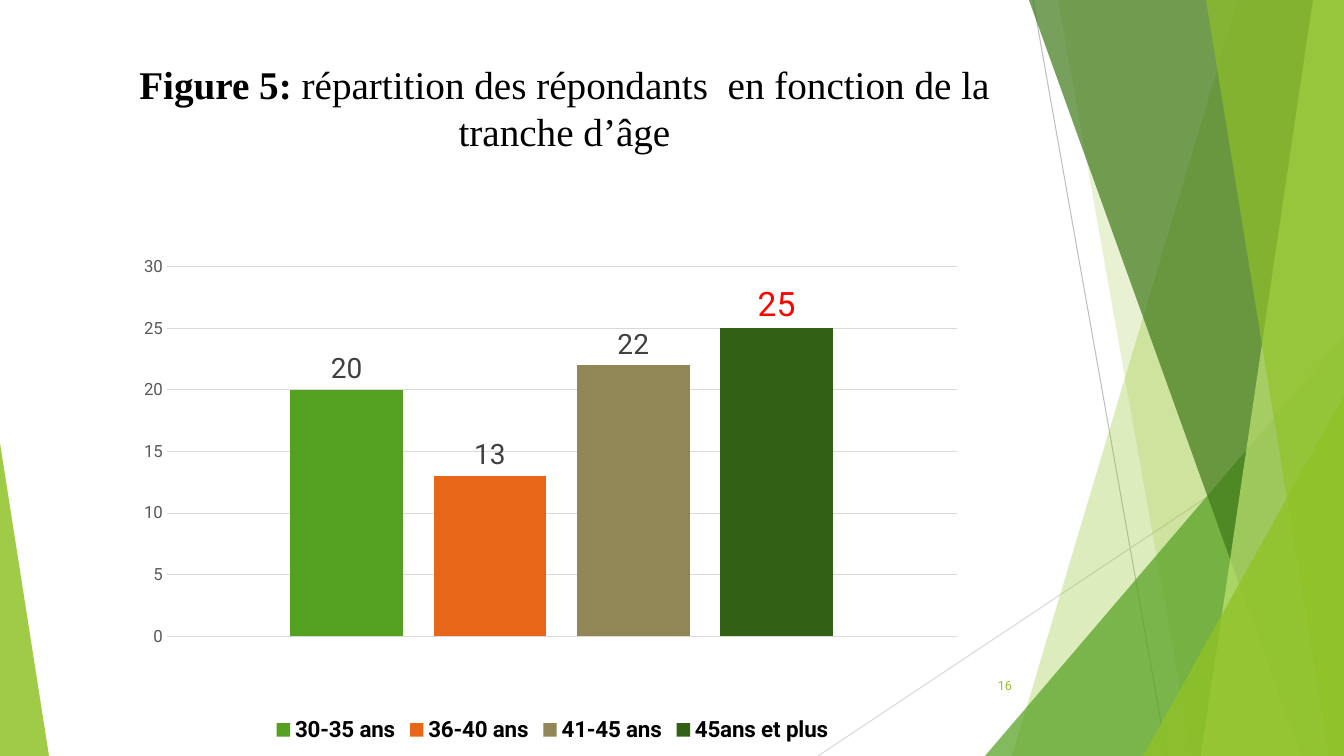
import pptx
import pptx.util
import pptx.chart.data
import pptx.oxml
import pptx.oxml.ns
from dataclasses import dataclass
from pptx.dml.color import RGBColor
from pptx.enum.chart import XL_CHART_TYPE, XL_LABEL_POSITION, XL_LEGEND_POSITION, XL_TICK_MARK
from pptx.enum.shapes import MSO_CONNECTOR, MSO_SHAPE
from pptx.enum.text import MSO_ANCHOR, PP_ALIGN


@dataclass(frozen=True)
class Theme:
    title_font: str = "Times New Roman"
    body_font: str = "Roboto"
    black: str = "000000"
    lime: str = "90C226"
    green: str = "54A021"
    dark_green: str = "3F7819"
    pale_lime: str = "C0E474"
    label: str = "404040"
    axis: str = "595959"
    grid: str = "D9D9D9"
    ray: str = "BFBFBF"
    red: str = "FF0000"
    title_size: int = 28
    label_size: int = 20
    highlight_size: int = 24
    legend_size: int = 16
    axis_size: int = 12
    number_size: int = 9


T = Theme()

# Content
TITLE = [("Figure 5: ", True),
         ("répartition des répondants  en fonction de la tranche d’âge", False)]
PAGE = "16"
# name, value, bar colour, label colour, label size
AGES = [
    ("30-35 ans", 20, T.green, T.label, T.label_size),
    ("36-40 ans", 13, "E76618", T.label, T.label_size),
    ("41-45 ans", 22, "918655", T.label, T.label_size),
    ("45ans et plus", 25, "326014", T.red, T.highlight_size),
]

# Geometry, in px
W, H = 1344, 756
TITLE_BOX = (107, 55, 915, 105)
CHART_BOX = (37, 155, 1031, 592)
PAGE_BOX = (947, 666, 75, 40)
PLOT = {"x": 0.126, "y": 0.189, "w": 0.766, "h": 0.624}
RAYS = [((1033, 0), (1167, H), T.ray), ((W, 406), (818, H), T.grid)]
# Bands run to the right edge: top-left x, bottom-left x, colour, opacity %
# Wedges are triangles: left, top, width, apex (0 left, 1 right), colour, opacity %
DECOR = [
    ("band", (1238, 1012), T.lime, 30),
    ("band", (1058, 1192), T.lime, 20),
    ("wedge", (985, 336, 359, 1), T.green, 72),
    ("band", (1029, 1301), T.dark_green, 70),
    ("band", (1313, 1201), T.pale_lime, 70),
    ("band", (1206, 1329), T.lime, 65),
    ("wedge", (1143, 396, 201, 1), T.lime, 80),
    ("wedge", (0, 443, 49, 0), T.lime, 85),
]

SCALE = 914400 / 100.8


def px(*values):
    return [pptx.util.Emu(round(v * SCALE)) for v in values]


def rgb(color):
    return RGBColor.from_string(color)


def style(font, name, size, color, bold=False):
    font.name, font.size, font.bold = name, pptx.util.Pt(size), bold
    font.color.rgb = rgb(color)


def add_xml(parent, tag, **attrs):
    el = pptx.oxml.ns.qn(tag)
    child = parent.makeelement(el, attrs)
    parent.append(child)
    return child


def paint(sp, color, opacity):
    sp.shadow.inherit = False
    sp.fill.solid()
    sp.fill.fore_color.rgb = rgb(color)
    sp.line.fill.background()
    clr = sp._element.spPr.find(".//" + pptx.oxml.ns.qn("a:srgbClr"))
    add_xml(clr, "a:alpha", val=str(opacity * 1000))


def add_decor(s):
    for start, end, color in RAYS:
        ray = s.shapes.add_connector(MSO_CONNECTOR.STRAIGHT, *px(*start, *end))
        ray.line.color.rgb = rgb(color)
        ray.line.width = pptx.util.Pt(0.75)
        add_xml(ray._element.spPr, "a:effectLst")
    for kind, place, color, opacity in DECOR:
        if kind == "band":
            top, bottom = place
            fb = s.shapes.build_freeform(top, 0, scale=SCALE)
            fb.add_line_segments([(W, 0), (W, H), (bottom, H)], close=True)
            sp = fb.convert_to_shape()
        else:
            x, y, w, apex = place
            sp = s.shapes.add_shape(MSO_SHAPE.ISOSCELES_TRIANGLE, *px(x, y, w, H - y))
            sp.adjustments[0] = apex
        paint(sp, color, opacity)


def add_age_chart(s):
    data = pptx.chart.data.CategoryChartData()
    data.categories = ["1"]
    for name, value, *_ in AGES:
        data.add_series(name, [value])
    chart = s.shapes.add_chart(XL_CHART_TYPE.COLUMN_CLUSTERED, *px(*CHART_BOX), data).chart
    style(chart.font, T.body_font, 10, T.black)
    chart.has_title = False

    # Bars and labels
    plot = chart.plots[0]
    plot.gap_width, plot.overlap, plot.vary_by_categories = 219, -27, False
    for series, (_, _, color, label_color, label_size) in zip(plot.series, AGES):
        series.format.fill.solid()
        series.format.fill.fore_color.rgb = rgb(color)
        labels = series.data_labels
        labels.show_value = True
        labels.position = XL_LABEL_POSITION.OUTSIDE_END
        style(labels.font, T.body_font, label_size, label_color)

    # Axes
    chart.category_axis.visible = False
    axis = chart.value_axis
    axis.minimum_scale, axis.maximum_scale, axis.major_unit = 0, 30, 5
    axis.major_tick_mark = axis.minor_tick_mark = XL_TICK_MARK.NONE
    axis.format.line.fill.background()
    axis.major_gridlines.format.line.color.rgb = rgb(T.grid)
    axis.major_gridlines.format.line.width = pptx.util.Pt(0.75)
    style(axis.tick_labels.font, T.body_font, T.axis_size, T.axis)

    # Legend
    chart.has_legend = True
    chart.legend.position = XL_LEGEND_POSITION.BOTTOM
    chart.legend.include_in_layout = False
    style(chart.legend.font, T.body_font, T.legend_size, T.black, True)

    # Fixed plot area and clear background
    qn = pptx.oxml.ns.qn
    area = chart._chartSpace.find(".//" + qn("c:plotArea"))
    for old in area.findall(qn("c:layout")):
        area.remove(old)
    layout = area.makeelement(qn("c:layout"), {})
    area.insert(0, layout)
    manual = add_xml(layout, "c:manualLayout")
    add_xml(manual, "c:layoutTarget", val="inner")
    for key in "xy":
        add_xml(manual, f"c:{key}Mode", val="edge")
    for key, value in PLOT.items():
        add_xml(manual, f"c:{key}", val=str(value))
    frame = area.makeelement(qn("c:spPr"), {})
    add_xml(frame, "a:noFill")
    add_xml(add_xml(frame, "a:ln"), "a:noFill")
    chart._chartSpace.find(qn("c:chart")).addnext(frame)


def write(sp, runs, align, font, size, color):
    tf = sp.text_frame
    tf.word_wrap = True
    tf.vertical_anchor = MSO_ANCHOR.MIDDLE
    p = tf.paragraphs[0]
    p.alignment = align
    for text, bold in runs:
        r = p.add_run()
        r.text = text
        style(r.font, font, size, color, bold)


def main():
    prs = pptx.Presentation()
    prs.slide_width, prs.slide_height = px(W, H)
    s = prs.slides.add_slide(prs.slide_layouts[5])

    add_decor(s)
    add_age_chart(s)

    # Title and page number
    title = s.shapes.title
    title.left, title.top, title.width, title.height = px(*TITLE_BOX)
    write(title, TITLE, PP_ALIGN.CENTER, T.title_font, T.title_size, T.black)
    page = s.shapes.add_textbox(*px(*PAGE_BOX))
    write(page, [(PAGE, False)], PP_ALIGN.RIGHT, T.body_font, T.number_size, T.lime)

    prs.save("out.pptx")


if __name__ == "__main__":
    main()
